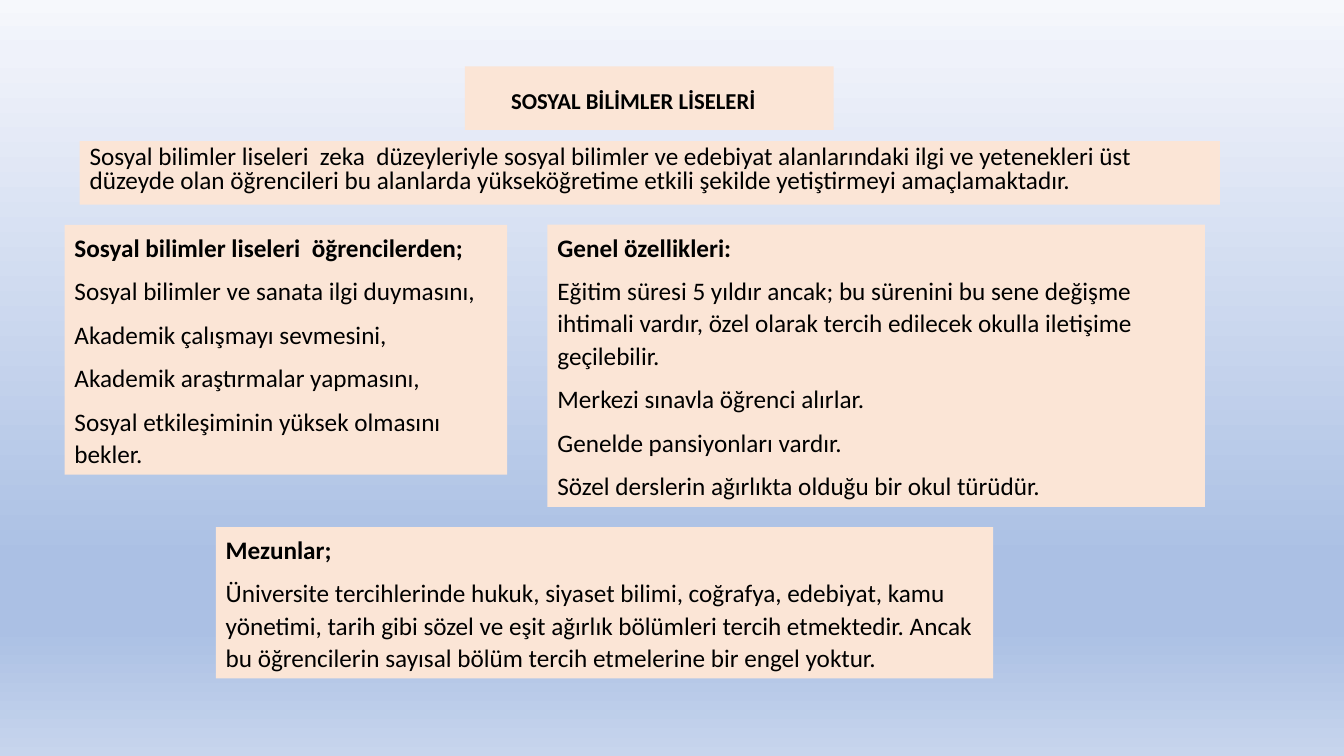
import pptx
import pptx.dml.color
import pptx.enum.shapes
import pptx.enum.text
import pptx.oxml.ns
import pptx.util
from dataclasses import dataclass
from lxml import etree
from pptx.util import Inches


@dataclass(frozen=True)
class Theme:
    font: str = "Calibri"
    ink: str = "000000"
    panel: str = "FBE5D6"
    title_size: float = 16.2
    body_size: float = 18
    sky: tuple = ((0, "F6F8FC"), (7, "EFF2FA"), (74, "ABC0E4"),
                  (83, "ABC0E4"), (100, "C7D5ED"))


THEME = Theme()

TITLE = "SOSYAL BİLİMLER LİSELERİ"
INTRO = ("Sosyal bilimler liseleri  zeka  düzeyleriyle sosyal bilimler ve edebiyat "
         "alanlarındaki ilgi ve yetenekleri üst düzeyde olan öğrencileri bu alanlarda "
         "yükseköğretime etkili şekilde yetiştirmeyi amaçlamaktadır.")
SECTIONS = [
    ((0.64, 2.23, 4.39, 2.48), "Sosyal bilimler liseleri  öğrencilerden;", [
        "Sosyal bilimler ve sanata ilgi duymasını,",
        "Akademik çalışmayı sevmesini,",
        "Akademik araştırmalar yapmasını,",
        "Sosyal etkileşiminin yüksek olmasını bekler."]),
    ((5.43, 2.23, 6.52, 2.8), "Genel özellikleri:", [
        "Eğitim süresi 5 yıldır ancak; bu sürenini bu sene değişme ihtimali vardır, "
        "özel olarak tercih edilecek okulla iletişime geçilebilir.",
        "Merkezi sınavla öğrenci alırlar.",
        "Genelde pansiyonları vardır.",
        "Sözel derslerin ağırlıkta olduğu bir okul türüdür."]),
    ((2.14, 5.23, 7.71, 1.5), "Mezunlar;", [
        "Üniversite tercihlerinde hukuk, siyaset bilimi, coğrafya, edebiyat, kamu "
        "yönetimi, tarih gibi sözel ve eşit ağırlık bölümleri tercih etmektedir. Ancak "
        "bu öğrencilerin sayısal bölüm tercih etmelerine bir engel yoktur."]),
]


def set_all(target, values):
    for name, value in values.items():
        setattr(target, name, value)


def rgb(color):
    return pptx.dml.color.RGBColor.from_string(color)


def paint_background(s):
    qn = pptx.oxml.ns.qn
    fill = s.background.fill
    fill.gradient()
    fill.gradient_angle = 270
    stops = next(s.element.iter(qn("a:gsLst")))
    for stop in list(stops):
        stops.remove(stop)
    for percent, color in THEME.sky:
        stop = etree.SubElement(stops, qn("a:gs"), pos=str(percent * 1000))
        etree.SubElement(stop, qn("a:srgbClr"), val=color)


def add_panel(s, box, frame_format):
    sp = s.shapes.add_shape(pptx.enum.shapes.MSO_SHAPE.RECTANGLE,
                            *(Inches(v) for v in box))
    sp.shadow.inherit = False
    sp.fill.solid()
    sp.fill.fore_color.rgb = rgb(THEME.panel)
    sp.line.fill.background()
    tf = sp.text_frame
    set_all(tf, {"word_wrap": True, **frame_format})
    return tf


def write_paragraph(p, text, size, bold, spacing):
    set_all(p, {"alignment": pptx.enum.text.PP_ALIGN.LEFT, **spacing})
    r = p.add_run()
    r.text = text
    set_all(r.font, {"name": THEME.font, "size": pptx.util.Pt(size), "bold": bold})
    r.font.color.rgb = rgb(THEME.ink)


def add_title(s, box):
    tf = add_panel(s, box, {
        "vertical_anchor": pptx.enum.text.MSO_ANCHOR.MIDDLE,
        "margin_left": Inches(0.46), "margin_top": Inches(0.12)})
    write_paragraph(tf.paragraphs[0], TITLE, THEME.title_size, True,
                    {"line_spacing": 0.9})


def add_intro(s, box):
    tf = add_panel(s, box, {"vertical_anchor": pptx.enum.text.MSO_ANCHOR.TOP})
    write_paragraph(tf.paragraphs[0], INTRO, THEME.body_size, False,
                    {"line_spacing": 0.8})


def add_section(s, box, heading, lines):
    tf = add_panel(s, box, {
        "vertical_anchor": pptx.enum.text.MSO_ANCHOR.TOP,
        "auto_size": pptx.enum.text.MSO_AUTO_SIZE.SHAPE_TO_FIT_TEXT})
    for i, text in enumerate([heading, *lines]):
        p = tf.add_paragraph() if i else tf.paragraphs[0]
        write_paragraph(p, text, THEME.body_size, i == 0,
                        {"line_spacing": 1.07, "space_after": pptx.util.Pt(8)})


def main():
    prs = pptx.Presentation()
    set_all(prs, {"slide_width": Inches(13.33), "slide_height": Inches(7.5)})
    s = prs.slides.add_slide(prs.slide_layouts[6])
    paint_background(s)
    add_title(s, (4.61, 0.66, 3.66, 0.63))
    add_intro(s, (0.79, 1.4, 11.31, 0.63))
    for box, heading, lines in SECTIONS:
        add_section(s, box, heading, lines)
    prs.save("out.pptx")


if __name__ == "__main__":
    main()
